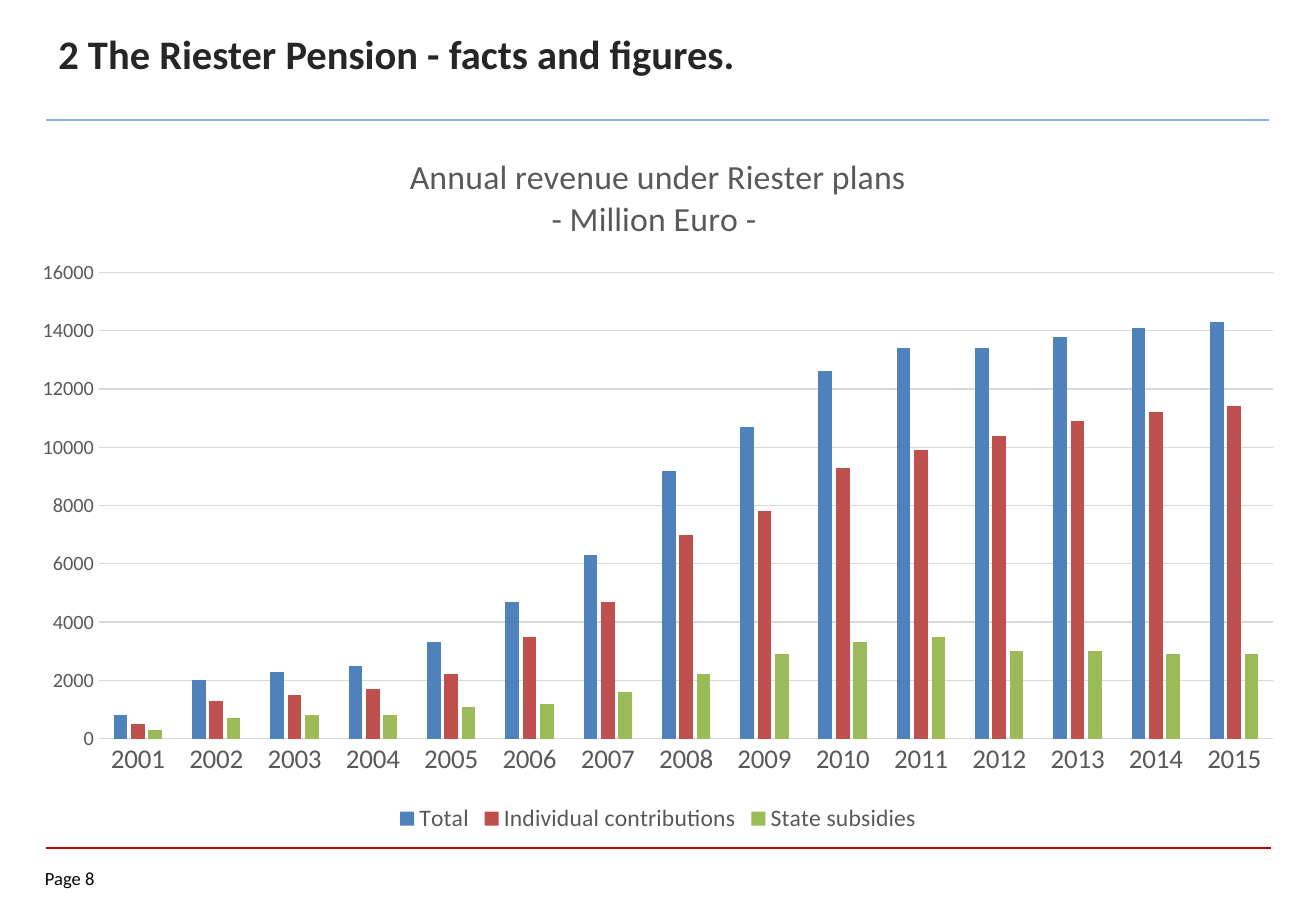
from lxml import etree
from pptx import Presentation
from pptx.chart.data import CategoryChartData
from pptx.dml.color import RGBColor
from pptx.enum.chart import XL_CHART_TYPE, XL_LEGEND_POSITION, XL_TICK_MARK
from pptx.enum.shapes import MSO_CONNECTOR
from pptx.enum.text import MSO_ANCHOR, PP_ALIGN
from pptx.oxml.ns import qn
from pptx.util import Inches, Pt

COLORS = {
    "header_rule": "8EB4E3", "footer_rule": "C00000",
    "heading": "262626", "page": "000000",
    "chart_text": "595959", "grid": "D9D9D9",
    "Total": "4F81BD", "Individual contributions": "C0504D", "State subsidies": "9BBB59",
}
REVENUE = {
    "Total": [800, 2000, 2300, 2500, 3300, 4700, 6300, 9200, 10700, 12600,
              13400, 13400, 13800, 14100, 14300],
    "Individual contributions": [500, 1300, 1500, 1700, 2200, 3500, 4700, 7000, 7800, 9300,
                                 9900, 10400, 10900, 11200, 11400],
    "State subsidies": [300, 700, 800, 800, 1100, 1200, 1600, 2200, 2900, 3300,
                        3500, 3000, 3000, 2900, 2900],
}


def color(name):
    return RGBColor.from_string(COLORS[name])


def style_font(font, size, color_name, bold=False):
    font.name = "Calibri"
    font.size = Pt(size)
    font.bold = bold
    font.color.rgb = color(color_name)


prs = Presentation()
prs.slide_width, prs.slide_height = Inches(10.83), Inches(7.5)
slide = prs.slides.add_slide(prs.slide_layouts[5])

# Rules above and below the chart
for name, right, y, width in (("footer_rule", 10.46, 6.98, 1), ("header_rule", 10.44, 0.99, 1.5)):
    rule = slide.shapes.add_connector(
        MSO_CONNECTOR.STRAIGHT, Inches(0.38), Inches(y), Inches(right), Inches(y))
    rule.line.color.rgb = color(name)
    rule.line.width = Pt(width)
    etree.SubElement(rule._element.spPr, qn("a:effectLst"))

# Heading
heading = slide.shapes.title
heading.left, heading.top = Inches(0.38), Inches(0.19)
heading.width, heading.height = Inches(7.56), Inches(0.71)
heading.text_frame.text = "2 The Riester Pension - facts and figures."
heading.text_frame.vertical_anchor = MSO_ANCHOR.TOP
heading_line = heading.text_frame.paragraphs[0]
heading_line.alignment = PP_ALIGN.LEFT
style_font(heading_line.font, 24, "heading", bold=True)

# Page number
page = slide.shapes.add_textbox(Inches(0.37), Inches(7.14), Inches(0.73), Inches(0.22)).text_frame
page.margin_left = page.margin_top = page.margin_right = page.margin_bottom = 0
page.word_wrap = True
page.text = "Page 8"
style_font(page.paragraphs[0].font, 11, "page")

# Revenue chart
revenue_data = CategoryChartData(number_format="0")
revenue_data.categories = [str(year) for year in range(2001, 2016)]
for name, values in REVENUE.items():
    revenue_data.add_series(name, values)
chart = slide.shapes.add_chart(
    XL_CHART_TYPE.COLUMN_CLUSTERED, Inches(0.14), Inches(1.07), Inches(10.55), Inches(5.83),
    revenue_data).chart
style_font(chart.font, 10, "page")

plot = chart.plots[0]
plot.gap_width, plot.overlap = 219, -27
plot.vary_by_categories = False
for series in plot.series:
    series.format.fill.solid()
    series.format.fill.fore_color.rgb = color(series.name)

# Chart title
chart.has_title = True
chart.chart_title.include_in_layout = False
chart_title = chart.chart_title.text_frame
chart_title.text = "Annual revenue under Riester plans\n- Million Euro - "
for paragraph in chart_title.paragraphs:
    style_font(paragraph.font, 20, "chart_text")

# Axes
years, euros = chart.category_axis, chart.value_axis
for axis, size in ((years, 16), (euros, 12)):
    axis.major_tick_mark = axis.minor_tick_mark = XL_TICK_MARK.NONE
    style_font(axis.tick_labels.font, size, "chart_text")
euros.minimum_scale, euros.maximum_scale, euros.major_unit = 0, 16000, 2000
euros.tick_labels.number_format = "0"
euros.tick_labels.number_format_is_linked = False
euros.format.line.fill.background()
for line in (years.format.line, euros.major_gridlines.format.line):
    line.color.rgb = color("grid")
    line.width = Pt(0.75)

# Legend
chart.has_legend = True
chart.legend.position = XL_LEGEND_POSITION.BOTTOM
chart.legend.include_in_layout = False
style_font(chart.legend.font, 14, "chart_text")

prs.save("out.pptx")
